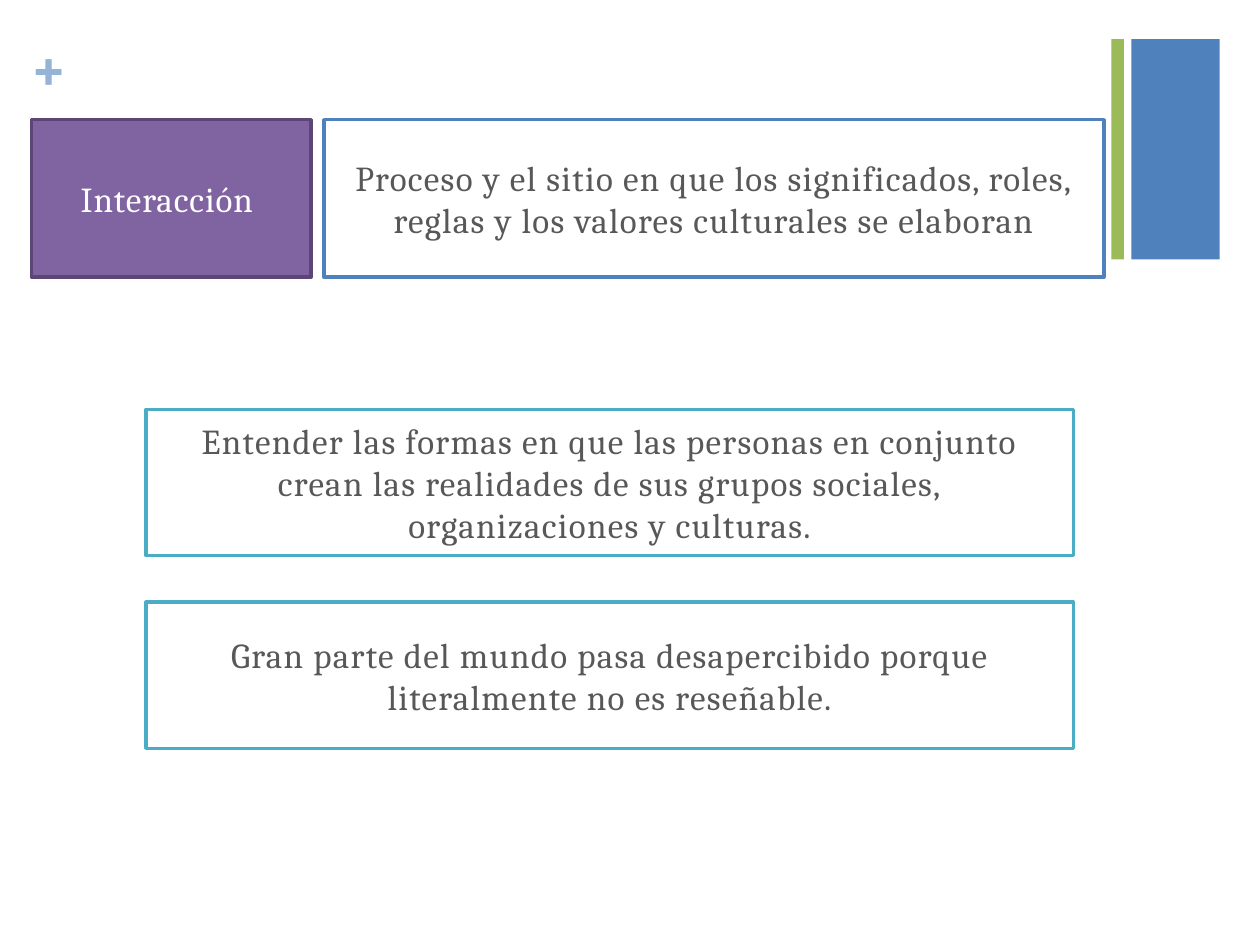
from pptx import Presentation
from pptx import util as u
from pptx.dml.color import RGBColor
from pptx.enum import shapes, text

BLUE = RGBColor(0x4F, 0x81, 0xBC)
PALE_BLUE = RGBColor(0x94, 0xB3, 0xD6)
GREEN = RGBColor(0x9B, 0xBA, 0x58)
PURPLE = RGBColor(0x80, 0x63, 0xA1)
DARK_PURPLE = RGBColor(0x5C, 0x46, 0x76)
TEAL = RGBColor(0x4A, 0xAC, 0xC5)
GRAY = RGBColor(0x58, 0x58, 0x58)
WHITE = RGBColor(0xFF, 0xFF, 0xFF)

FONT = "Cambria"
DEFINITION = [
    "Proceso y el sitio en que los significados, roles,",
    "reglas y los valores culturales se elaboran",
]
IDEAS = [
    ["Entender las formas en que las personas en conjunto crean las "
     "realidades de sus grupos sociales, organizaciones y culturas."],
    ["Gran parte del mundo pasa desapercibido porque",
     "literalmente no es reseñable."],
]


def place(shape, box):
    shape.left, shape.top, shape.width, shape.height = map(u.Inches, box)


def paint(shape, fill=None, line=None):
    if fill is None:
        shape.fill.background()
    else:
        shape.fill.solid()
        shape.fill.fore_color.rgb = fill
    if line is None:
        shape.line.fill.background()
    else:
        shape.line.color.rgb = line
        shape.line.width = u.Pt(2)


def write(shape, lines, color, size=20, spacing=0.75, margin=0.0, bold=False,
          align=text.PP_ALIGN.CENTER, anchor=text.MSO_ANCHOR.MIDDLE):
    frame = shape.text_frame
    frame.text = "\n".join(lines)
    frame.word_wrap = True
    frame.auto_size = text.MSO_AUTO_SIZE.NONE
    frame.vertical_anchor = anchor
    frame.margin_left = frame.margin_right = u.Inches(margin)
    frame.margin_top = frame.margin_bottom = 0
    for paragraph in frame.paragraphs:
        paragraph.alignment = align
        paragraph.space_before = u.Pt(0)
        for run in paragraph.runs:
            run.font.name = FONT
            run.font.size = u.Pt(size)
            run.font.bold = bold
            run.font.color.rgb = color
            run.font._element.set("spc", str(round(spacing * 100)))


def add_rectangle(slide, box, fill=None, line=None):
    shape = slide.shapes.add_shape(
        shapes.MSO_SHAPE.RECTANGLE, *map(u.Inches, box))
    shape.shadow.inherit = False
    paint(shape, fill, line)
    return shape


def add_decoration(slide, box):
    left, top, width, height = box
    bar, gap = 0.1, 0.06
    block_left = left + bar + gap
    add_rectangle(slide, (block_left, top, width - bar - gap, height), BLUE)
    add_rectangle(slide, (left, top, bar, height), GREEN)


def add_plus(slide, box):
    plus = slide.shapes.add_textbox(*map(u.Inches, box))
    write(plus, ["+"], PALE_BLUE, size=36, spacing=2.7, margin=0.01, bold=True,
          align=text.PP_ALIGN.LEFT, anchor=text.MSO_ANCHOR.TOP)


def add_heading(slide, box):
    left, top, width, height = box
    title_width, gap = 2.22, 0.1
    definition_left = left + title_width + gap
    definition = add_rectangle(
        slide, (definition_left, top, width - title_width - gap, height),
        line=BLUE)
    write(definition, DEFINITION, GRAY)
    title = slide.shapes.title
    place(title, (left, top, title_width, height))
    paint(title, PURPLE, DARK_PURPLE)
    write(title, ["Interacción"], WHITE, spacing=0.5, margin=0.39,
          align=text.PP_ALIGN.LEFT)


def add_ideas(slide, box):
    left, top, width, height = box
    gap = 0.37
    row = (height - gap * (len(IDEAS) - 1)) / len(IDEAS)
    for index, lines in enumerate(IDEAS):
        idea = add_rectangle(
            slide, (left, top + index * (row + gap), width, row), line=TEAL)
        write(idea, lines, GRAY, margin=0.32)


def main():
    presentation = Presentation()
    presentation.slide_width = u.Inches(10)
    presentation.slide_height = u.Inches(7.5)
    slide = presentation.slides.add_slide(presentation.slide_layouts[5])
    add_decoration(slide, (8.82, 0.31, 0.86, 1.75))
    add_plus(slide, (0.23, 0.22, 0.36, 0.63))
    add_heading(slide, (0.25, 0.95, 8.51, 1.25))
    add_ideas(slide, (1.16, 3.25, 7.36, 2.69))
    presentation.save("out.pptx")


if __name__ == "__main__":
    main()
